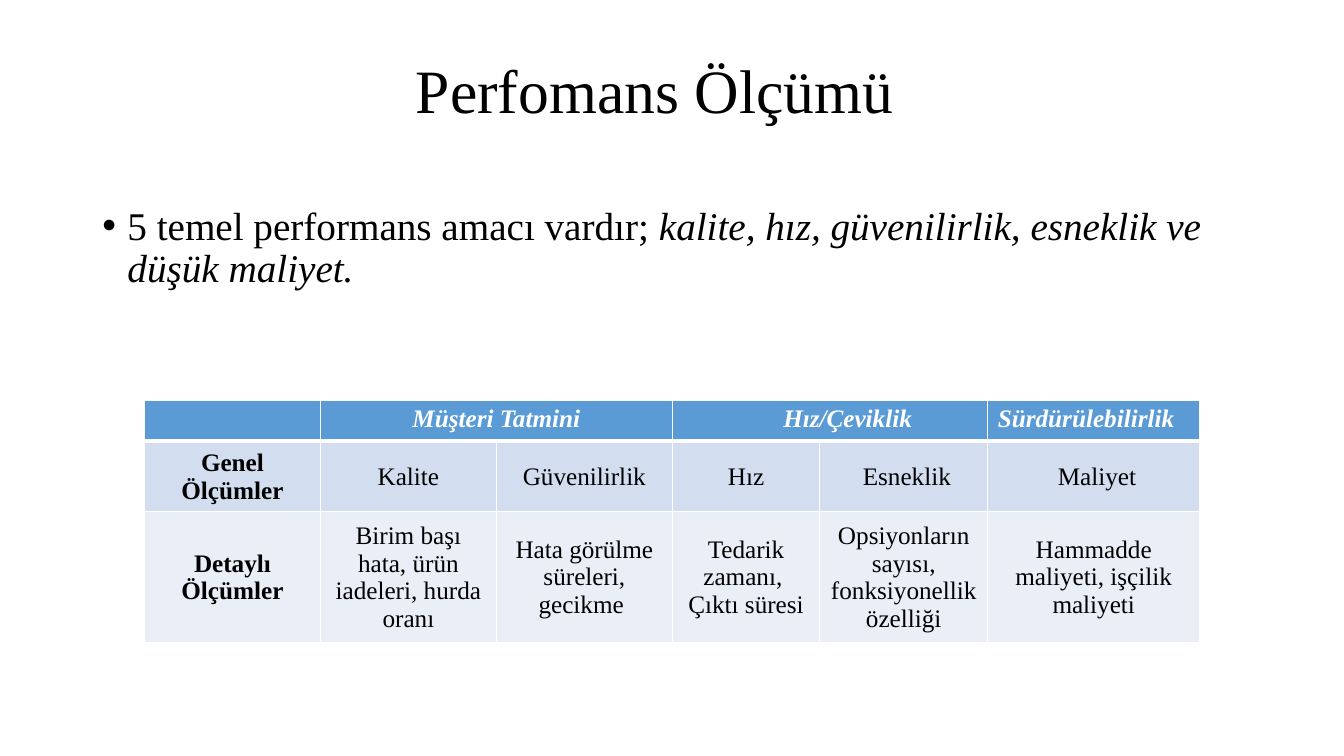
from dataclasses import dataclass

from lxml.etree import SubElement
from pptx import Presentation
from pptx.dml.color import RGBColor as Rgb
from pptx.enum.text import MSO_ANCHOR as Anchor, PP_ALIGN as Align
from pptx.oxml.ns import qn
from pptx.util import Pt


@dataclass(frozen=True)
class Theme:
    font: str = "Times New Roman"
    title_size: int = 44
    body_size: int = 28
    table_size: int = 18
    ink: str = "000000"
    paper: str = "FFFFFF"
    row_fills: tuple = ("5B9BD5", "D2DEEF", "EAEFF7")


class SlideBuilder:
    def __init__(self, slide, theme):
        self.slide = slide
        self.theme = theme

    def style(self, paragraph, size, color, bold=False, italic=None):
        font = paragraph.font
        font.name, font.size = self.theme.font, Pt(size)
        font.bold, font.italic = bold, italic
        font.color.rgb = Rgb.from_string(color)

    def indent(self, paragraph, left, first=0):
        properties = paragraph._p.get_or_add_pPr()
        properties.set("marL", str(Pt(left)))
        properties.set("indent", str(Pt(first)))
        return properties

    def text(self, box, runs, size, anchor=Anchor.TOP):
        """Add one paragraph made of (text, italic) runs."""
        frame = self.slide.shapes.add_textbox(*map(Pt, box)).text_frame
        frame.word_wrap = True
        frame.vertical_anchor = anchor
        paragraph = frame.paragraphs[0]
        paragraph.line_spacing = 0.9
        self.style(paragraph, size, self.theme.ink)
        for words, italic in runs:
            run = paragraph.add_run()
            run.text = words
            if italic:
                run.font.italic = True
        return paragraph

    def bullet(self, box, runs, size):
        paragraph = self.text(box, runs, size)
        paragraph.space_before = Pt(10)
        properties = self.indent(paragraph, 18, -18)
        SubElement(properties, qn("a:buFont"), typeface="Arial")
        SubElement(properties, qn("a:buChar"), char="•")

    def borders(self, cell, **widths):
        for side, width in widths.items():
            line = SubElement(cell._tc.get_or_add_tcPr(), qn(f"a:ln{side}"), w=str(Pt(width)))
            fill = SubElement(line, qn("a:solidFill"))
            SubElement(fill, qn("a:srgbClr"), val=self.theme.paper)

    def cell(self, cell, words, row, column, indent):
        header = row == 0
        self.borders(cell, L=1, R=1, T=3 if row == 1 else 1, B=3 if header else 1)
        cell.fill.solid()
        cell.fill.fore_color.rgb = Rgb.from_string(self.theme.row_fills[row])
        cell.vertical_anchor = Anchor.TOP if header else Anchor.MIDDLE
        cell.text = words
        for paragraph in cell.text_frame.paragraphs:
            paragraph.alignment = Align.LEFT if header else Align.CENTER
            self.indent(paragraph, indent)
            self.style(paragraph, self.theme.table_size,
                       self.theme.paper if header else self.theme.ink,
                       bold=header or column == 0, italic=header)

    def table(self, left, top, widths, heights, rows, merges, indents):
        table = self.slide.shapes.add_table(
            len(heights), len(widths), Pt(left), Pt(top),
            Pt(sum(widths)), Pt(sum(heights))).table
        table.first_row = table.horz_banding = False
        for column, width in zip(table.columns, widths):
            column.width = Pt(width)
        for line, height in zip(table.rows, heights):
            line.height = Pt(height)
        for row, texts in enumerate(rows):
            for column, words in enumerate(texts):
                self.cell(table.cell(row, column), words, row, column,
                          indents.get((row, column), 0))
        for row, first, last in merges:
            table.cell(row, first).merge(table.cell(row, last))


def main():
    deck = Presentation()
    deck.slide_width, deck.slide_height = Pt(960), Pt(540)
    theme = Theme()
    builder = SlideBuilder(deck.slides.add_slide(deck.slide_layouts[6]), theme)

    # Title
    builder.text((290, 14.4, 379.5, 104.4), [("Perfomans Ölçümü", False)],
                 theme.title_size, Anchor.MIDDLE)

    # Performance goals
    builder.bullet((66, 144, 828, 342.7),
                   [("5 temel performans amacı vardır; ", False),
                    ("kalite, hız, güvenilirlik, esneklik ve düşük maliyet.", True)],
                   theme.body_size)

    # Measures by goal
    measures = [
        ("", "Müşteri Tatmini", "", "Hız/Çeviklik", "", "Sürdürülebilirlik"),
        ("Genel Ölçümler", "Kalite", "Güvenilirlik", "Hız", "Esneklik", "Maliyet"),
        ("Detaylı Ölçümler", "Birim başı hata, ürün iadeleri, hurda oranı",
         "Hata görülme süreleri, gecikme ", "Tedarik zamanı, \nÇıktı süresi",
         "Opsiyonların sayısı, fonksiyonellik özelliği",
         "Hammadde maliyeti, işçilik maliyeti"),
    ]
    builder.table(103.2, 286, (125.7, 125.7, 125.7, 105.3, 120, 151.5), (29.2, 46.4, 87),
                  measures, merges=[(0, 1, 2), (0, 3, 4)],
                  indents={(0, 1): 58.5, (0, 3): 72, (1, 4): 4.5, (1, 5): 4.5})

    deck.save("out.pptx")


if __name__ == "__main__":
    main()
